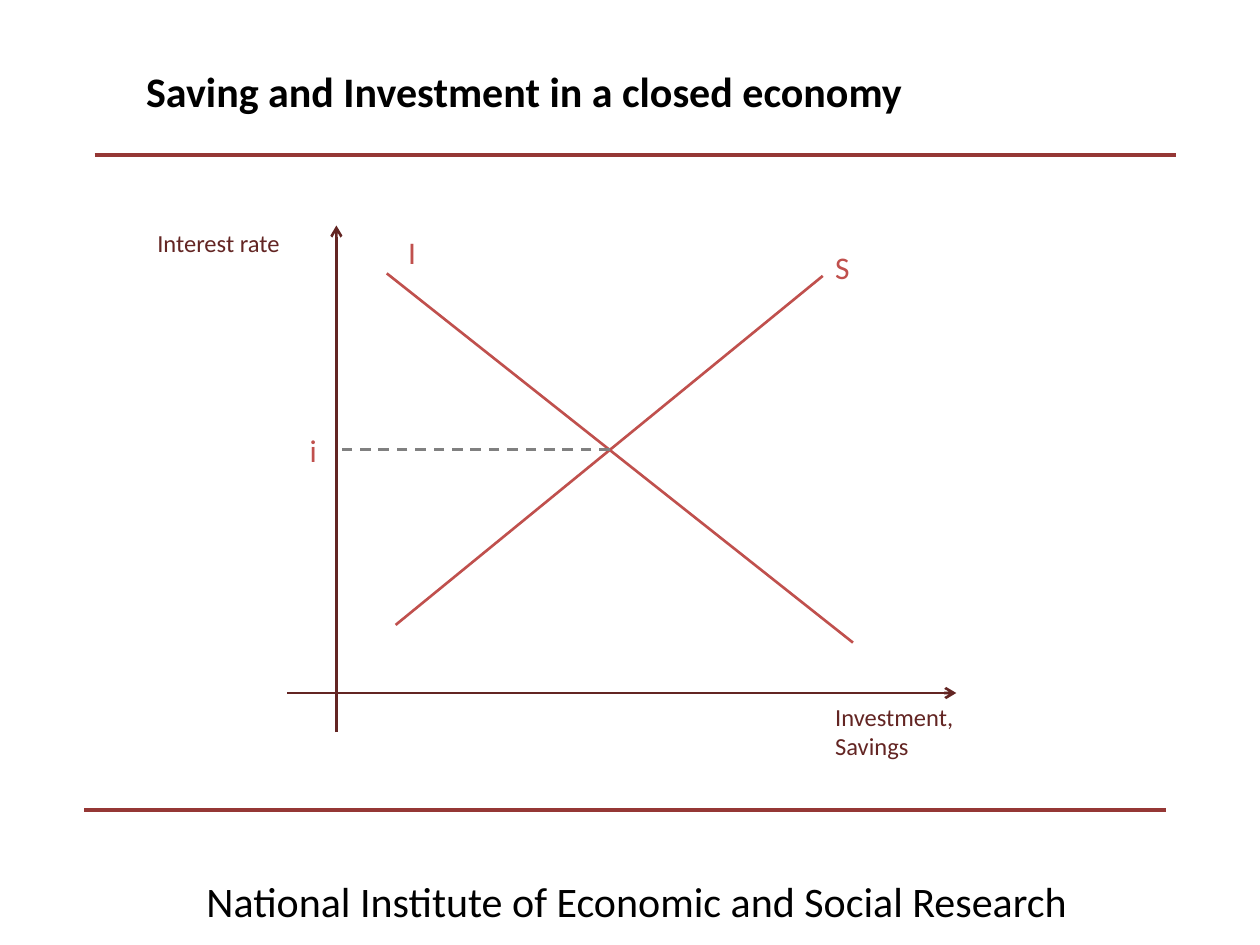
from pptx import Presentation
from pptx.dml.color import RGBColor
from pptx.enum.dml import MSO_LINE
from pptx.enum.shapes import MSO_CONNECTOR
from pptx.enum.text import MSO_ANCHOR, MSO_AUTO_SIZE, PP_ALIGN
from pptx.oxml.ns import qn
from pptx.util import Inches, Pt
from lxml.etree import SubElement

BLACK = RGBColor(0x00, 0x00, 0x00)
RULE = RGBColor(0x95, 0x37, 0x35)
AXIS = RGBColor(0x63, 0x25, 0x23)
CURVE = RGBColor(0xC0, 0x50, 0x4D)
GUIDE = RGBColor(0x80, 0x80, 0x80)

prs = Presentation()
prs.slide_width, prs.slide_height = Inches(10), Inches(7.5)
s = prs.slides.add_slide(prs.slide_layouts[5])


def add_line(x1, y1, x2, y2, color, width=1.5):
    line = s.shapes.add_connector(
        MSO_CONNECTOR.STRAIGHT, Inches(x1), Inches(y1), Inches(x2), Inches(y2))
    line.line.color.rgb = color
    line.line.width = Pt(width)
    SubElement(line._element.spPr, qn("a:effectLst"))
    return line


def write(sp, text, size, color, bold=False):
    tf = sp.text_frame
    tf.text = text
    tf.word_wrap = True
    tf.auto_size = MSO_AUTO_SIZE.NONE
    tf.vertical_anchor = MSO_ANCHOR.TOP
    for p in tf.paragraphs:
        p.alignment = PP_ALIGN.LEFT
        for r in p.runs:
            r.font.name = "Calibri"
            r.font.size = Pt(size)
            r.font.bold = bold
            r.font.color.rgb = color


# Title and the rules that frame the diagram
title = s.shapes.title
title.left, title.top = Inches(1.06), Inches(0.47)
title.width, title.height = Inches(8.03), Inches(0.5)
write(title, "Saving and Investment in a closed economy", 24, BLACK, bold=True)

for x, y in [(0.75, 1.23), (0.67, 6.43)]:
    add_line(x, y, x + 8.58, y, RULE, 2.25)

# Axes
for ends in [(2.67, 5.81, 2.67, 1.79), (2.28, 5.5, 7.59, 5.5)]:
    axis = add_line(*ends, AXIS)
    SubElement(axis.line._get_or_add_ln(), qn("a:tailEnd"), type="arrow")

# Investment and saving curves, and the equilibrium rate
add_line(6.77, 5.1, 3.07, 2.17, CURVE)
add_line(6.53, 2.19, 3.14, 4.96, CURVE)
equilibrium = add_line(4.84, 3.57, 2.67, 3.57, GUIDE)
equilibrium.line.dash_style = MSO_LINE.DASH

labels = [
    ("S", 6.53, 1.92, 0.31, 0.4, 18, CURVE),
    ("I", 3.14, 1.8, 0.31, 0.4, 18, CURVE),
    ("i", 2.36, 3.37, 0.31, 0.4, 18, CURVE),
    ("Interest rate", 1.15, 1.76, 1.5, 0.34, 14, AXIS),
    ("Investment,\nSavings", 6.53, 5.52, 1.5, 0.57, 14, AXIS),
    ("National Institute of Economic and Social Research",
     1.54, 6.9, 7.95, 0.4, 24, BLACK),
]
for text, x, y, w, h, size, color in labels:
    box = s.shapes.add_textbox(Inches(x), Inches(y), Inches(w), Inches(h))
    write(box, text, size, color)

prs.save("out.pptx")
